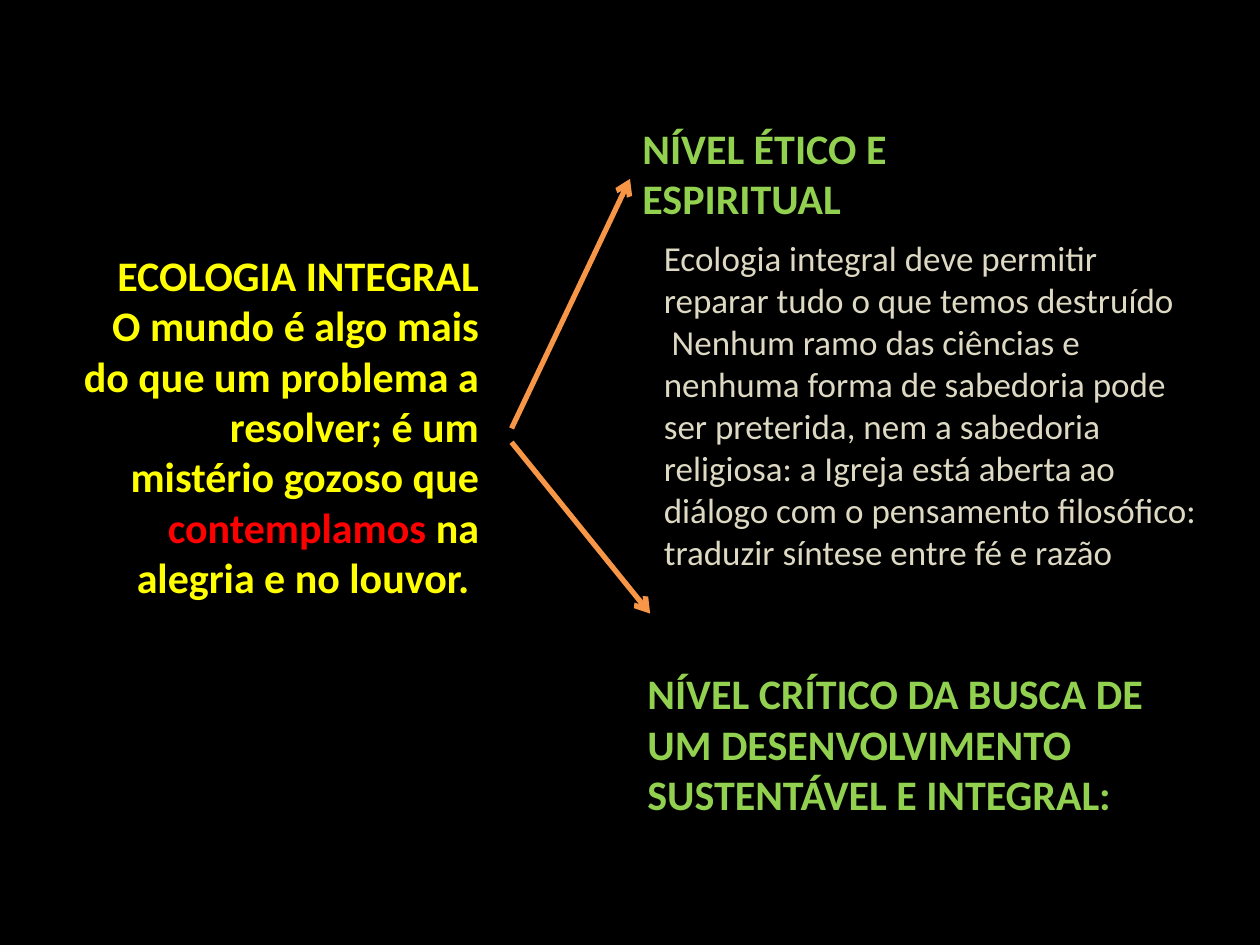
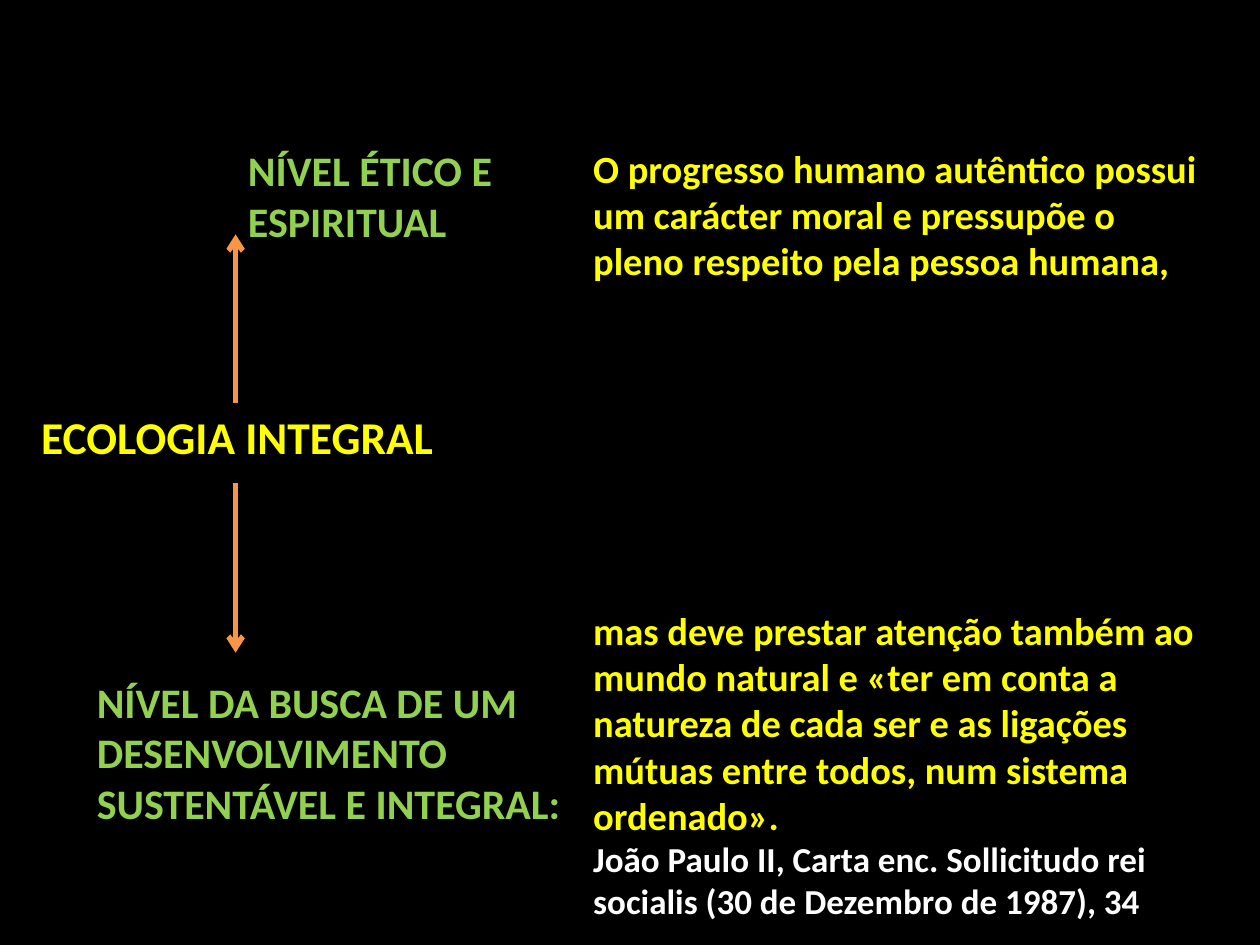
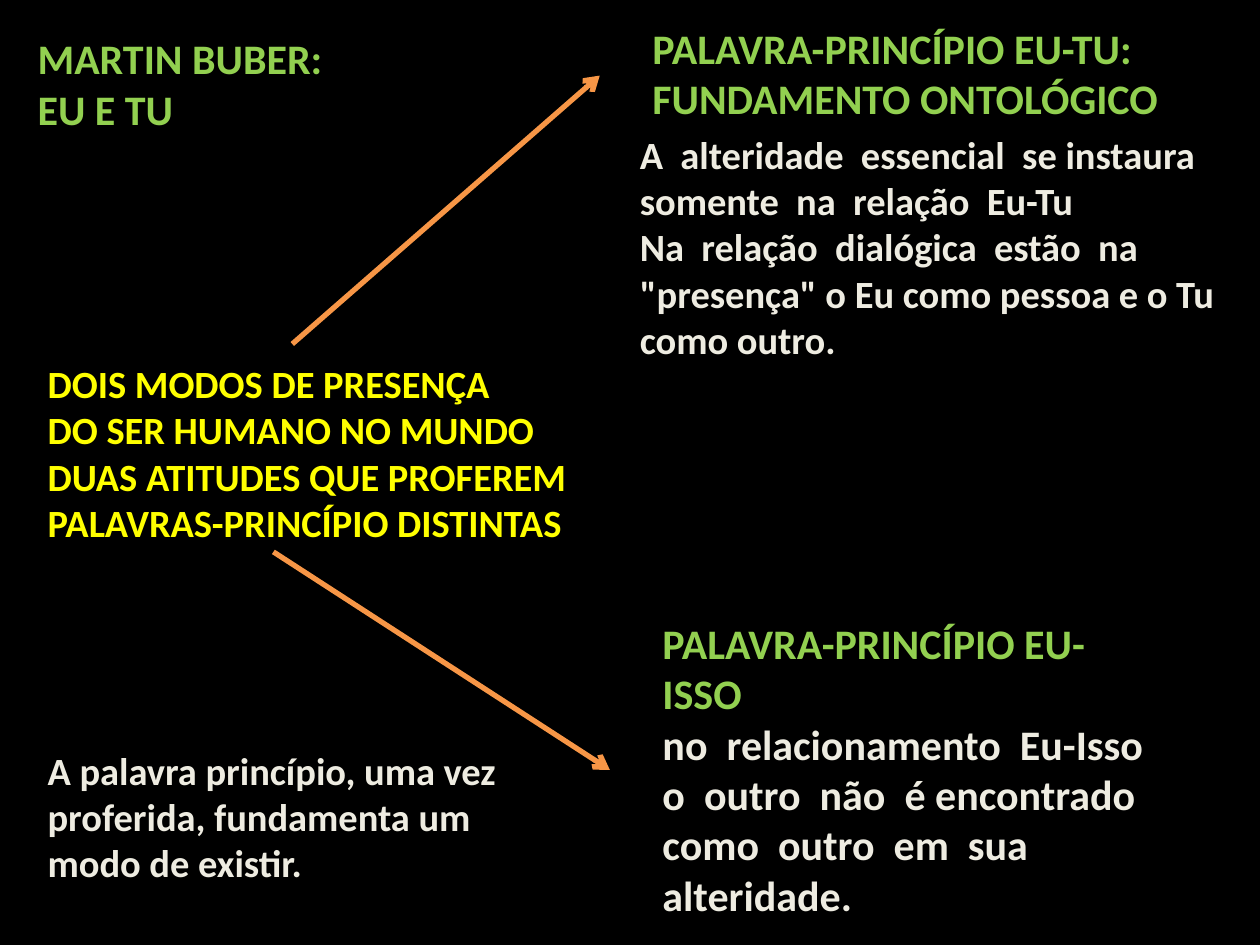
import lxml.etree
import pptx
import pptx.dml.color
import pptx.enum.shapes
import pptx.enum.text
import pptx.oxml.ns
import pptx.util

RGB = pptx.dml.color.RGBColor
BLACK = RGB(0x00, 0x00, 0x00)
WHITE = RGB(0xFF, 0xFF, 0xFF)
YELLOW = RGB(0xFF, 0xFF, 0x00)
GREEN = RGB(0x92, 0xD0, 0x50)
RED = RGB(0xFF, 0x00, 0x00)
SAND = RGB(0xDD, 0xD9, 0xC3)
CREAM = RGB(0xEE, 0xEC, 0xE1)
ORANGE = RGB(0xF7, 0x96, 0x46)

FONT = "Calibri"
HEAD, BODY, SMALL = 24, 22, 20
WIDE, HIGH = pptx.util.Inches(10), pptx.util.Inches(7.5)
COLS, ROWS = 100, 75
RIGHT = pptx.enum.text.PP_ALIGN.RIGHT


def col(count):
    return round(WIDE * count / COLS)


def row(count):
    return round(HIGH * count / ROWS)


def write(slide, place, *paras, size=BODY, color=CREAM, bold=True,
          align=None, wrap=True):
    """Add a text box at (left, top, width, height) in grid units.

    A paragraph is a string or a list of (text, changes) runs.
    """
    left, top, width, height = place
    box = slide.shapes.add_textbox(col(left), row(top), col(width), row(height))
    frame = box.text_frame
    frame.word_wrap = wrap
    frame.auto_size = pptx.enum.text.MSO_AUTO_SIZE.SHAPE_TO_FIT_TEXT
    for index, para in enumerate(paras):
        line = frame.paragraphs[0] if index == 0 else frame.add_paragraph()
        line.alignment = align
        for text, change in [(para, {})] if isinstance(para, str) else para:
            run = line.add_run()
            run.text = text
            run.font.name = FONT
            run.font.bold = bold
            run.font.size = pptx.util.Pt(change.get("size", size))
            run.font.color.rgb = change.get("color", color)
    return box


def title(slide, place, *paras):
    write(slide, place, *paras, size=HEAD, color=GREEN)


def arrow(slide, start, end):
    """Draw an arrow between two (column, row) points."""
    link = slide.shapes.add_connector(
        pptx.enum.shapes.MSO_CONNECTOR.STRAIGHT,
        col(start[0]), row(start[1]), col(end[0]), row(end[1]))
    link.line.color.rgb = ORANGE
    link.line.width = pptx.util.Pt(3)
    name = pptx.oxml.ns.qn
    props = link.element.find(name("p:spPr"))
    stroke = props.find(name("a:ln"))
    lxml.etree.SubElement(stroke, name("a:tailEnd"), type="arrow")
    lxml.etree.SubElement(props, name("a:effectLst"))
    return link


def levels(slide):
    write(slide, (5.1, 19.3, 33.9, 29.3),
          "ECOLOGIA INTEGRAL",
          [("O mundo é algo mais do que um problema a resolver; "
            "é um mistério gozoso que ", {}),
           ("contemplamos", {"color": RED}),
           (" na alegria e no louvor. ", {})],
          size=HEAD, color=YELLOW, align=RIGHT)
    title(slide, (50, 9.2, 33.9, 9.1), "NÍVEL ÉTICO E ESPIRITUAL")
    title(slide, (50.4, 52.5, 41.7, 17.2),
          "NÍVEL CRÍTICO DA BUSCA DE UM DESENVOLVIMENTO "
          "SUSTENTÁVEL E INTEGRAL:")
    arrow(slide, (40.6, 34), (50, 14.2))
    arrow(slide, (40.6, 35.1), (51.6, 48.7))
    write(slide, (51.7, 18.3, 44.5, 31.3),
          "Ecologia integral deve permitir reparar tudo o que temos destruído",
          " Nenhum ramo das ciências e nenhuma forma de sabedoria pode ser "
          "preterida, nem a sabedoria religiosa: a Igreja está aberta ao "
          "diálogo com o pensamento filosófico: traduzir síntese entre "
          "fé e razão",
          size=SMALL, color=SAND, bold=False)


def progress(slide):
    quote = write(
        slide, (46.1, 11, 50, 63.3),
        "O progresso humano autêntico possui um carácter moral e pressupõe "
        "o pleno respeito pela pessoa humana,",
        "mas deve prestar atenção também ao mundo natural e «ter em conta a "
        "natureza de cada ser e as ligações mútuas entre todos, num sistema "
        "ordenado».",
        [("João Paulo II, Carta enc. Sollicitudo rei socialis "
          "(30 de Dezembro de 1987), 34", {"size": SMALL, "color": WHITE})],
        color=YELLOW)
    quote.text_frame.paragraphs[1].space_before = pptx.util.Pt(185)
    title(slide, (18.7, 11, 23.6, 9.1), "NÍVEL ÉTICO E ESPIRITUAL")
    title(slide, (6.7, 53.2, 41.7, 17.2),
          "NÍVEL DA BUSCA DE UM DESENVOLVIMENTO SUSTENTÁVEL E INTEGRAL:")
    theme = write(slide, (2, 32, 33.4, 5.4), "ECOLOGIA INTEGRAL",
                  size=26, color=YELLOW, align=RIGHT, wrap=False)
    rise = arrow(slide, (18.7, 32), (18.7, 18.6))
    rise.begin_connect(theme, 0)
    arrow(slide, (18.7, 38.3), (18.7, 51.8))


def modes(slide):
    title(slide, (2, 2.1, 33.9, 9.1), "MARTIN BUBER:", "EU E TU")
    write(slide, (2.8, 28.1, 48.9, 15.8),
          "DOIS MODOS DE PRESENÇA",
          "DO SER HUMANO NO MUNDO",
          "DUAS ATITUDES QUE PROFEREM PALAVRAS-PRINCÍPIO DISTINTAS",
          color=YELLOW)
    write(slide, (49.8, 9.9, 50, 19.5),
          "A  alteridade  essencial  se instaura  somente  na  relação  Eu-Tu",
          "Na  relação  dialógica  estão  na \"presença\" o Eu como pessoa "
          "e o Tu como outro.")
    title(slide, (50.8, 1.3, 45.7, 9.1),
          "PALAVRA-PRINCÍPIO EU-TU: FUNDAMENTO ONTOLÓGICO")
    title(slide, (51.6, 48.5, 41.7, 25.2),
          "PALAVRA-PRINCÍPIO EU-ISSO",
          [("no  relacionamento  Eu-Isso  o  outro  não  é encontrado  como  "
            "outro  em  sua  alteridade.", {"color": CREAM})])
    write(slide, (2.8, 58.8, 43.3, 12.1),
          "A palavra princípio, uma vez proferida, fundamenta um modo "
          "de existir.")
    arrow(slide, (23.2, 27.3), (47.6, 6))
    arrow(slide, (21.7, 43.8), (48.4, 61.1))


def main():
    deck = pptx.Presentation()
    deck.slide_width, deck.slide_height = WIDE, HIGH
    back = deck.slide_master.background.fill
    back.solid()
    back.fore_color.rgb = BLACK
    for fill in (levels, progress, modes):
        fill(deck.slides.add_slide(deck.slide_layouts[6]))
    deck.save("out.pptx")


if __name__ == "__main__":
    main()
